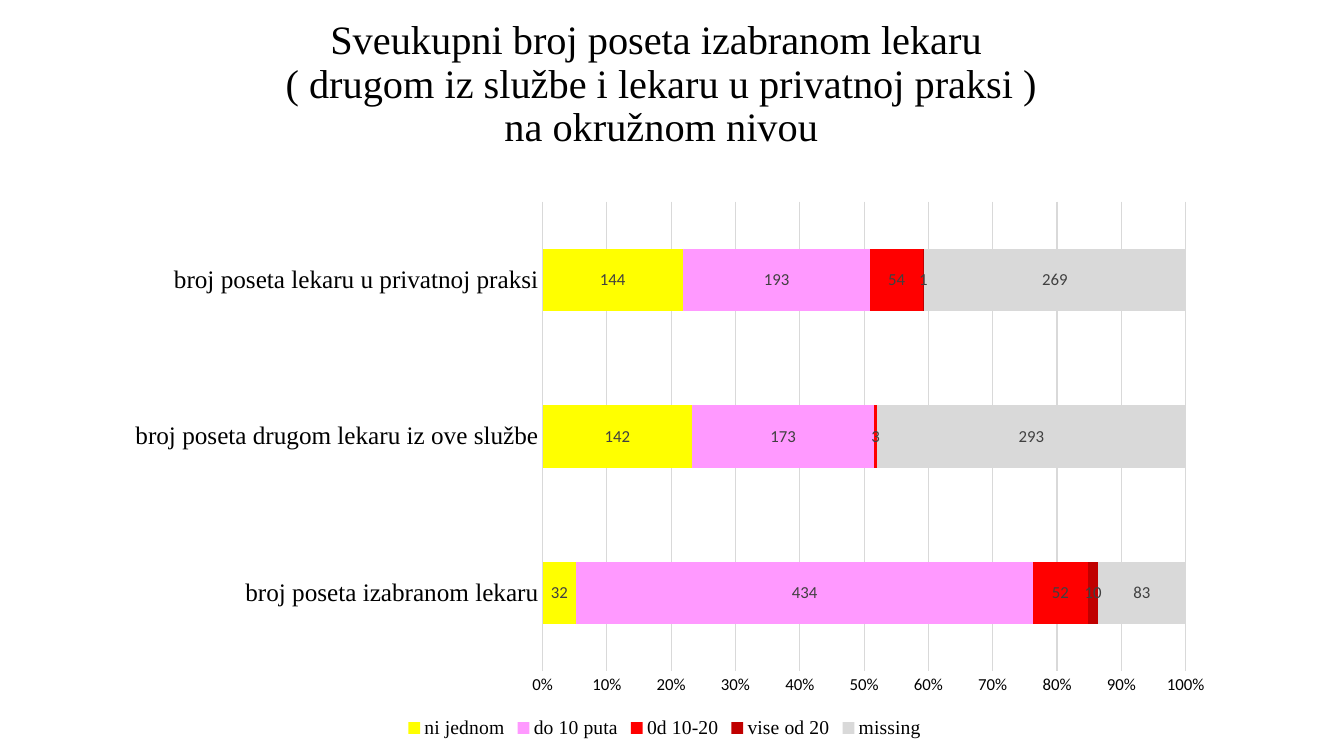
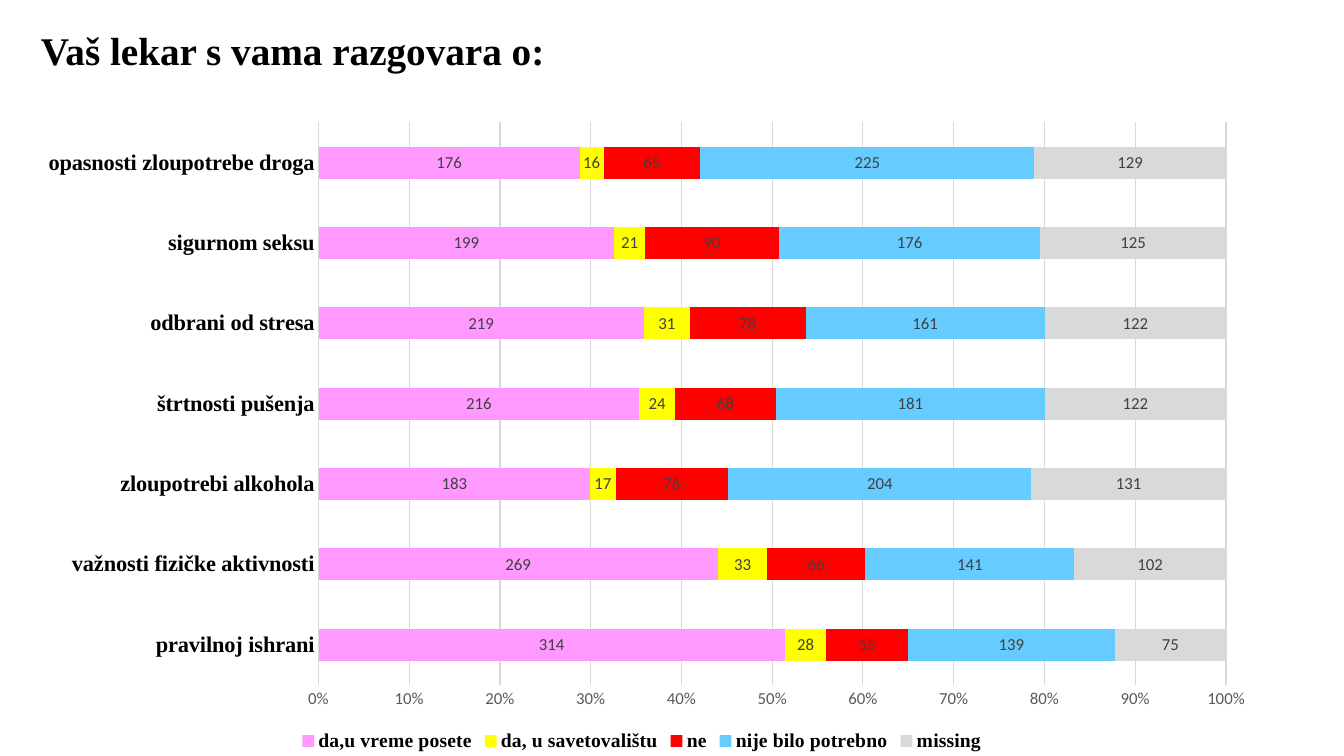
from lxml import etree
from pptx import Presentation
from pptx.chart.data import CategoryChartData
from pptx.dml.color import RGBColor
from pptx.enum.chart import XL_CHART_TYPE, XL_LEGEND_POSITION, XL_TICK_MARK
from pptx.enum.text import MSO_ANCHOR, PP_ALIGN
from pptx.oxml.ns import qn
from pptx.util import Inches, Pt

STACKED = XL_CHART_TYPE.BAR_STACKED_100
BOTTOM = XL_LEGEND_POSITION.BOTTOM
NO_TICK = XL_TICK_MARK.NONE
MIDDLE = MSO_ANCHOR.MIDDLE
LEFT, CENTER = PP_ALIGN.LEFT, PP_ALIGN.CENTER

BLACK = RGBColor(0x00, 0x00, 0x00)
DARK_GRAY = RGBColor(0x40, 0x40, 0x40)
MID_GRAY = RGBColor(0x59, 0x59, 0x59)
LIGHT_GRAY = RGBColor(0xD9, 0xD9, 0xD9)
YELLOW = RGBColor(0xFF, 0xFF, 0x00)
PINK = RGBColor(0xFF, 0x99, 0xFF)
RED = RGBColor(0xFF, 0x00, 0x00)
DARK_RED = RGBColor(0xC0, 0x00, 0x00)
SKY_BLUE = RGBColor(0x66, 0xCC, 0xFF)

SERIF, SANS = "Times New Roman", "Calibri"


def set_font(font, size, name=SERIF, color=BLACK, bold=False):
    font.size, font.name, font.bold = Pt(size), name, bold
    font.color.rgb = color


def write(frame, text, align=LEFT, spacing=0.9, **style):
    """Put one paragraph in a text frame; newlines become line breaks."""
    paragraph = frame.paragraphs[0]
    paragraph.text = text
    paragraph.alignment, paragraph.line_spacing = align, spacing
    for run in paragraph.runs:
        set_font(run.font, **style)


class Deck:
    """Holds the style and the current slide; boxes are percent of the slide."""

    def __init__(self):
        self.prs = Presentation()
        self.prs.slide_width, self.prs.slide_height = Inches(13.33), Inches(7.5)
        self.slide = None

    def new_slide(self):
        self.slide = self.prs.slides.add_slide(self.prs.slide_layouts[6])

    def place(self, x, y, width, height):
        across, down = self.prs.slide_width, self.prs.slide_height
        return [int(share * full / 100) for share, full in
                ((x, across), (y, down), (width, across), (height, down))]

    def title(self, text, box, **style):
        frame = self.slide.shapes.add_textbox(*self.place(*box)).text_frame
        frame.word_wrap = True
        frame.vertical_anchor = MIDDLE
        write(frame, text, **style)

    def stacked_bars(self, box, plot_box, topics, answers, topic_size,
                     bold=False, scale_color=BLACK):
        data = CategoryChartData()
        data.categories = topics
        for name, _, counts in answers:
            data.add_series(name, counts)
        chart = self.slide.shapes.add_chart(
            STACKED, *self.place(*box), data).chart
        chart.has_title = False
        set_font(chart.font, 10, SANS)

        # Bars and their values
        plot = chart.plots[0]
        plot.overlap, plot.gap_width = 100, 150
        plot.vary_by_categories = False
        for series, (_, color, _) in zip(plot.series, answers):
            series.format.fill.solid()
            series.format.fill.fore_color.rgb = color
            labels = series.data_labels
            labels.show_value = True
            set_font(labels.font, 12, SANS, DARK_GRAY)

        # Axes
        topic_axis, scale = chart.category_axis, chart.value_axis
        for axis in (topic_axis, scale):
            axis.major_tick_mark = axis.minor_tick_mark = NO_TICK
        set_font(topic_axis.tick_labels.font, topic_size, bold=bold)
        set_font(scale.tick_labels.font, 12, SANS, scale_color)
        scale.tick_labels.number_format = "0%"
        scale.tick_labels.number_format_is_linked = False
        scale.has_major_gridlines = True
        scale.format.line.fill.background()
        for line in (topic_axis.format.line, scale.major_gridlines.format.line):
            line.color.rgb, line.width = LIGHT_GRAY, Pt(0.75)

        # Legend
        chart.has_legend = True
        chart.legend.position = BOTTOM
        chart.legend.include_in_layout = False
        set_font(chart.legend.font, 14, bold=bold)
        self.fix_plot_area(chart, plot_box)

    @staticmethod
    def fix_plot_area(chart, plot_box):
        """Set the inner plot area, as shares of the chart."""
        area = chart.element.find(".//" + qn("c:plotArea"))
        layout = area.find(qn("c:layout"))
        if layout is None:
            layout = etree.Element(qn("c:layout"))
            area.insert(0, layout)
        manual = etree.SubElement(layout, qn("c:manualLayout"))
        settings = [("layoutTarget", "inner"), ("xMode", "edge"),
                    ("yMode", "edge"), *zip("xywh", plot_box)]
        for tag, value in settings:
            etree.SubElement(manual, qn("c:" + tag)).set("val", str(value))


def main():
    deck = Deck()

    # Number of visits
    deck.new_slide()
    deck.title("Sveukupni broj poseta izabranom lekaru \n"
               "( drugom iz službe i lekaru u privatnoj praksi )\n"
               "na okružnom nivou",
               (8, 1.3, 82.4, 19.9), align=CENTER, size=28.8)
    deck.stacked_bars(
        (8.2, 25.2, 82.5, 73.1), (0.39, 0.02, 0.58, 0.85),
        ["broj poseta izabranom lekaru",
         "broj poseta drugom lekaru iz ove službe",
         "broj poseta lekaru u privatnoj praksi"],
        [("ni jednom", YELLOW, (32, 142, 144)),
         ("do 10 puta", PINK, (434, 173, 193)),
         ("0d 10-20", RED, (52, 3, 54)),
         ("vise od 20", DARK_RED, (10, None, 1)),
         ("missing", LIGHT_GRAY, (83, 293, 269))],
        topic_size=18)

    # Topics discussed with the doctor
    deck.new_slide()
    deck.title("Vaš lekar s vama razgovara o:", (2.3, 0, 87.3, 14.1),
               size=28, bold=True)
    deck.stacked_bars(
        (1.5, 14.5, 92.5, 85.5), (0.24, 0.02, 0.73, 0.87),
        ["pravilnoj ishrani", "važnosti fizičke aktivnosti",
         "zloupotrebi alkohola", "štrtnosti pušenja", "odbrani od stresa",
         "sigurnom seksu", "opasnosti zloupotrebe droga"],
        [("da,u vreme posete", PINK, (314, 269, 183, 216, 219, 199, 176)),
         ("da, u savetovalištu", YELLOW, (28, 33, 17, 24, 31, 21, 16)),
         ("ne", RED, (55, 66, 76, 68, 78, 90, 65)),
         ("nije bilo potrebno", SKY_BLUE,
          (139, 141, 204, 181, 161, 176, 225)),
         ("missing", LIGHT_GRAY, (75, 102, 131, 122, 122, 125, 129))],
        topic_size=16, bold=True, scale_color=MID_GRAY)

    deck.prs.save("out.pptx")


if __name__ == "__main__":
    main()
